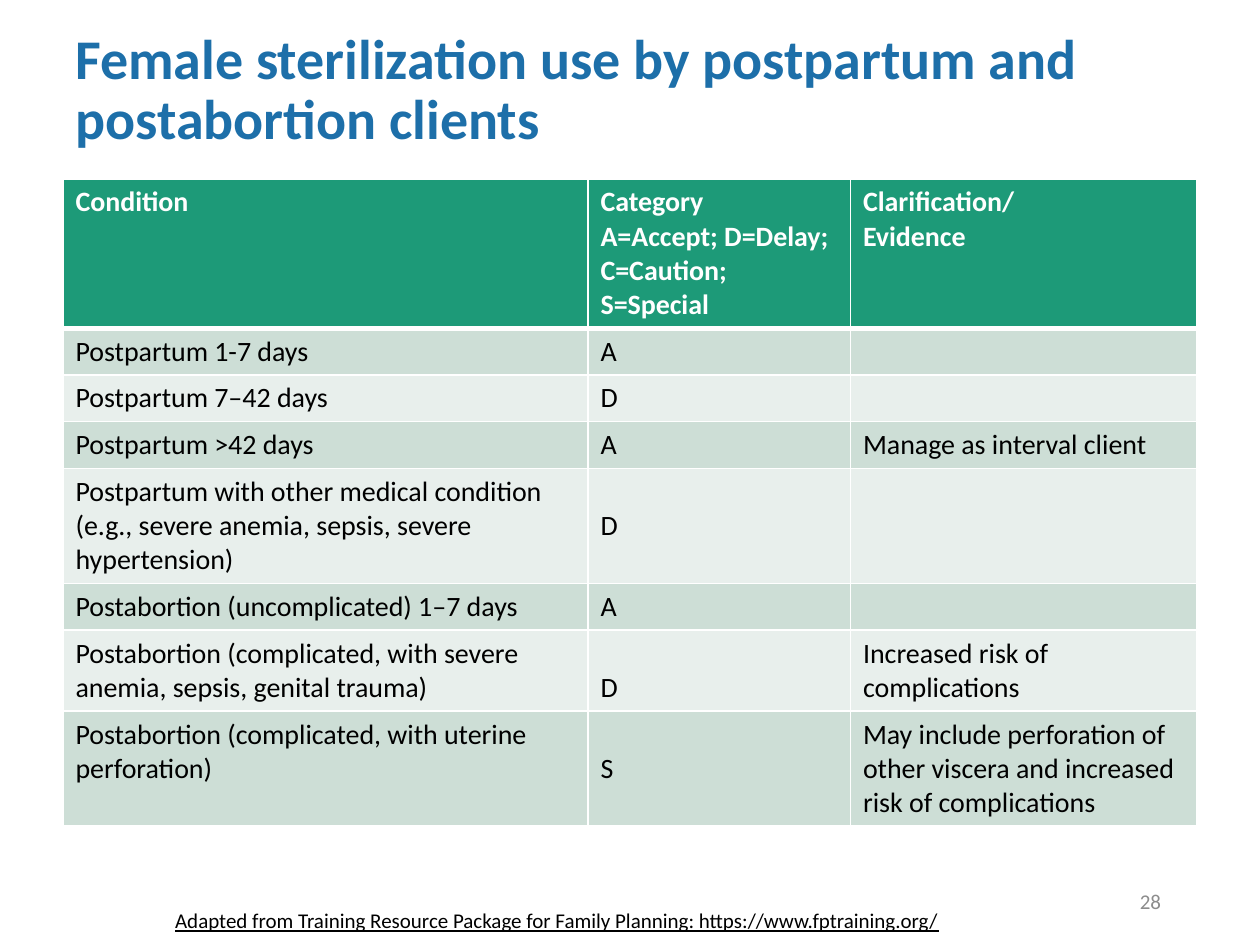
from lxml import etree
from pptx import Presentation
from pptx.dml.color import RGBColor
from pptx.enum.text import MSO_ANCHOR, PP_ALIGN
from pptx.oxml.ns import qn
from pptx.util import Pt

TOP, MIDDLE, BOTTOM = MSO_ANCHOR.TOP, MSO_ANCHOR.MIDDLE, MSO_ANCHOR.BOTTOM
LEFT, RIGHT = PP_ALIGN.LEFT, PP_ALIGN.RIGHT

FONT = "Calibri"
WHITE, BLACK, BLUE, GRAY = "FFFFFF", "000000", "1D6FA9", "8C8C8C"
GREEN, BANDS = "1D9A78", ("CDDED6", "E8EFEC")
LINE_HEIGHT, CELL_PADDING = 19.53, 7.2
COLUMN_WIDTHS = (300, 150, 198)

HEADER = ("Condition",
          "Category\nA=Accept; D=Delay;\nC=Caution; S=Special",
          "Clarification/\vEvidence")
HEADER_LINES = 4

# Condition, category, clarification, lines of text, anchor of the category
CONDITIONS = [
    ("Postpartum 1-7 days", "A", "", 1, TOP),
    ("Postpartum 7–42 days", "D", "", 1, TOP),
    ("Postpartum >42 days", "A", "Manage as interval client", 1, TOP),
    ("Postpartum with other medical condition (e.g., severe anemia, sepsis, "
     "severe hypertension)", "D", "", 3, MIDDLE),
    ("Postabortion (uncomplicated) 1–7 days", "A", "", 1, TOP),
    ("Postabortion (complicated, with severe anemia, sepsis, genital trauma)",
     "D", "Increased risk of complications", 2, BOTTOM),
    ("Postabortion (complicated, with uterine perforation)", "S",
     "May include perforation of other viscera and increased risk of "
     "complications", 3, MIDDLE),
]


def rgb(color):
    return RGBColor.from_string(color)


def write(frame, text, size=16, color=BLACK, bold=False, underline=False,
          align=LEFT, spacing=None):
    frame.word_wrap = True
    frame.text = text
    for paragraph in frame.paragraphs:
        paragraph.alignment = align
        if spacing:
            paragraph.line_spacing = spacing
        for run in paragraph.runs:
            font = run.font
            font.name, font.size = FONT, Pt(size)
            font.bold, font.underline = bold, underline
            font.color.rgb = rgb(color)
        if not paragraph.runs:  # keeps an empty cell at the row's text size
            etree.SubElement(paragraph._p, qn("a:endParaRPr"), sz=str(size * 100))


def add_label(slide, left, top, width, height, text, anchor=TOP, **text_format):
    label = slide.shapes.add_textbox(Pt(left), Pt(top), Pt(width), Pt(height))
    label.text_frame.vertical_anchor = anchor
    write(label.text_frame, text, **text_format)


def set_borders(cell, **widths):
    properties = cell._tc.get_or_add_tcPr()
    for position, side in enumerate("LRTB"):
        width = Pt(widths.get(side, 1))
        border = etree.Element(qn(f"a:ln{side}"), w=str(width))
        fill = etree.SubElement(border, qn("a:solidFill"))
        etree.SubElement(fill, qn("a:srgbClr"), val=WHITE)
        properties.insert(position, border)


def fill_cell(cell, text, fill, anchor=TOP, borders=None, **text_format):
    cell.fill.solid()
    cell.fill.fore_color.rgb = rgb(fill)
    cell.vertical_anchor = anchor
    set_borders(cell, **(borders or {}))
    write(cell.text_frame, text, **text_format)


def add_conditions_table(slide, left, top):
    line_counts = [HEADER_LINES] + [row[3] for row in CONDITIONS]
    heights = [lines * LINE_HEIGHT + CELL_PADDING for lines in line_counts]
    table = slide.shapes.add_table(
        len(heights), len(COLUMN_WIDTHS), Pt(left), Pt(top),
        Pt(sum(COLUMN_WIDTHS)), Pt(sum(heights))).table
    for column, width in zip(table.columns, COLUMN_WIDTHS):
        column.width = Pt(width)
    for row, height in zip(table.rows, heights):
        row.height = Pt(height)

    # Header row with a heavier rule below it
    for column, heading in enumerate(HEADER):
        fill_cell(table.cell(0, column), heading, GREEN, borders={"B": 3},
                  color=WHITE, bold=True)

    # Banded condition rows
    for index, (*texts, _, category_anchor) in enumerate(CONDITIONS):
        anchors = (TOP, category_anchor, TOP)
        for column, (text, anchor) in enumerate(zip(texts, anchors)):
            borders = {"T": 3} if index == 0 else None
            fill_cell(table.cell(index + 1, column), text, BANDS[index % 2],
                      anchor, borders)


def main():
    presentation = Presentation()
    presentation.slide_width, presentation.slide_height = Pt(720), Pt(540)
    slide = presentation.slides.add_slide(presentation.slide_layouts[6])

    # Title
    add_label(slide, 36, 7.2, 648, 90,
              "Female sterilization use by postpartum and postabortion clients",
              MIDDLE, size=32, color=BLUE, bold=True, spacing=0.9)

    add_conditions_table(slide, 36, 102.25)

    # Source line and slide number
    add_label(slide, 93, 515, 500, 19.5,
              "Adapted from Training Resource Package for Family Planning: "
              "https://www.fptraining.org/", size=12, underline=True)
    add_label(slide, 508.5, 500.5, 162, 28.8, "28", MIDDLE,
              size=12, color=GRAY, align=RIGHT)

    presentation.save("out.pptx")


if __name__ == "__main__":
    main()
